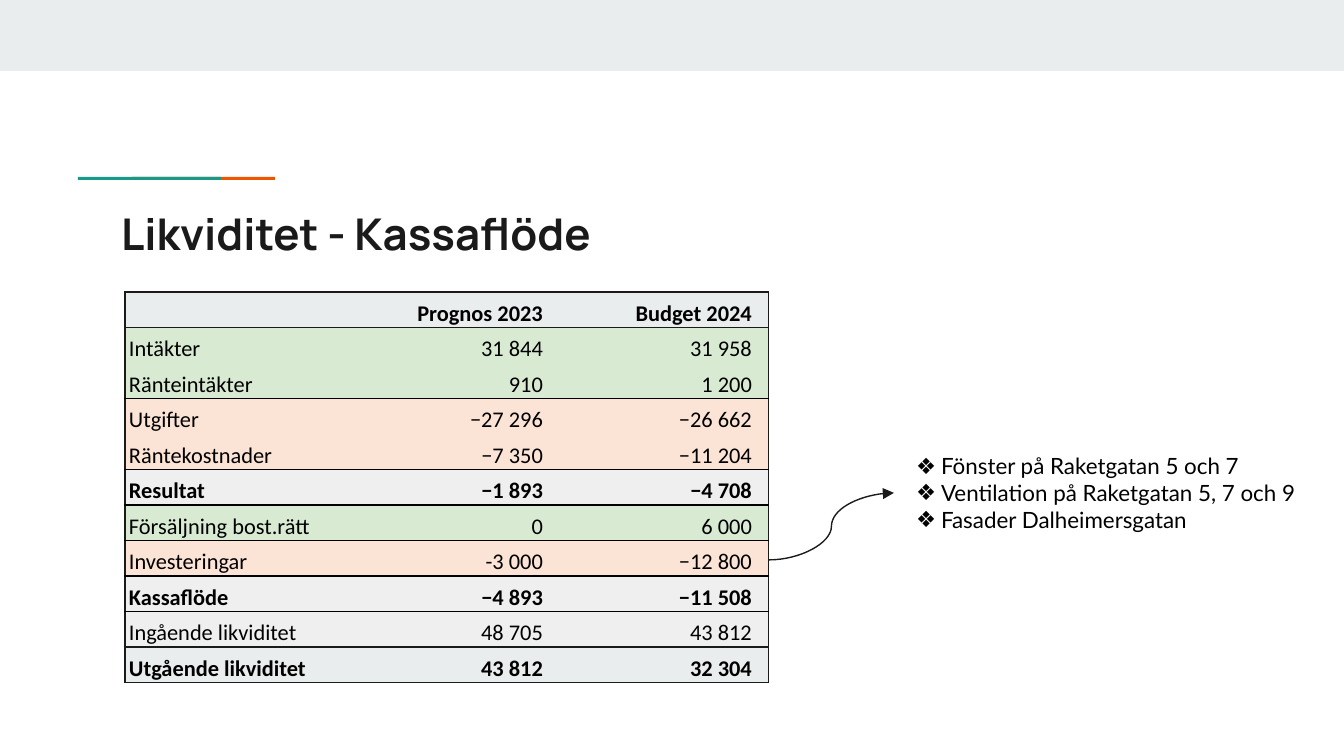
from lxml import etree
from pptx import Presentation
from pptx import util as u
from pptx.dml import color
from pptx.enum import shapes, text
from pptx.oxml import ns

EMU_PER_PX = 914400 / 134.4
INK, BLACK, WHITE = "1A1A1A", "000000", "FFFFFF"
MIST, GREEN, PEACH, GREY = "E9EDEE", "D9EAD3", "FBE4D5", "EFEFEF"
TEAL, ORANGE = "1A9988", "EB5600"

# label, forecast, budget, fill, bold, colour of the rule below
CASH_FLOW = [
    ("", "Prognos 2023", "Budget 2024", MIST, True, INK),
    ("Intäkter", "31 844", "31 958", GREEN, False, None),
    ("Ränteintäkter", "910", "1 200", GREEN, False, BLACK),
    ("Utgifter", "−27 296", "−26 662", PEACH, False, None),
    ("Räntekostnader", "−7 350", "−11 204", PEACH, False, BLACK),
    ("Resultat", "−1 893", "−4 708", GREY, True, BLACK),
    ("Försäljning bost.rätt", "0", "6 000", GREEN, False, BLACK),
    ("Investeringar", "-3 000", "−12 800", PEACH, False, BLACK),
    ("Kassaflöde", "−4 893", "−11 508", GREY, True, BLACK),
    ("Ingående likviditet", "48 705", "43 812", GREY, False, INK),
    ("Utgående likviditet", "43 812", "32 304", MIST, True, INK),
]
INVESTMENTS = [
    "Fönster på Raketgatan 5 och 7",
    "Ventilation på Raketgatan 5, 7 och 9",
    "Fasader Dalheimersgatan",
]


def px(length):
    return u.Emu(round(length * EMU_PER_PX))


def rgb(code):
    return color.RGBColor.from_string(code)


def add_run(paragraph, words, font, size, shade, bold=False):
    run = paragraph.add_run()
    run.text = words
    run.font.name, run.font.size, run.font.bold = font, u.Pt(size), bold
    run.font.color.rgb = rgb(shade)


def place(shape, box):
    shape.left, shape.top, shape.width, shape.height = map(px, box)


def set_margins(holder, left, top, right, bottom):
    holder.margin_left, holder.margin_top = px(left), px(top)
    holder.margin_right, holder.margin_bottom = px(right), px(bottom)


def add_bar(slide, box, shade):
    bar = slide.shapes.add_shape(shapes.MSO_SHAPE.RECTANGLE, *map(px, box))
    bar.shadow.inherit = False
    bar.fill.solid()
    bar.fill.fore_color.rgb = rgb(shade)
    bar.line.fill.background()


def add_accent(slide, box):
    """Two-tone rule: the teal bar overlaps the orange one."""
    left, top, width, height = box
    bar = 143
    add_bar(slide, (left + width - bar, top, bar, height), ORANGE)
    add_bar(slide, (left, top, bar, height), TEAL)


def fill_title(title, box):
    place(title, box)
    frame = title.text_frame
    frame.word_wrap = True
    frame.auto_size = text.MSO_AUTO_SIZE.NONE
    frame.vertical_anchor = text.MSO_ANCHOR.TOP
    set_margins(frame, 13, 13, 13, 13)
    heading = frame.paragraphs[0]
    heading.alignment = text.PP_ALIGN.LEFT
    add_run(heading, "Likviditet - Kassaflöde", "Manrope", 23.4, INK, True)


def set_borders(cell, **edges):
    properties = cell._tc.get_or_add_tcPr()
    for side in "LRTB":
        line = etree.SubElement(properties, ns.qn(f"a:ln{side}"), w=str(u.Pt(0.75)))
        if edges.get(side):
            paint = etree.SubElement(line, ns.qn("a:solidFill"))
            etree.SubElement(paint, ns.qn("a:srgbClr"), val=edges[side])
        else:
            etree.SubElement(line, ns.qn("a:noFill"))


def fill_cell(cell, words, column, bold):
    set_margins(cell, 4, 0, 17 if column == 2 else 4, 0)
    cell.vertical_anchor = text.MSO_ANCHOR.BOTTOM
    entry = cell.text_frame.paragraphs[0]
    entry.line_spacing = 1.15
    entry.alignment = text.PP_ALIGN.RIGHT if column else text.PP_ALIGN.LEFT
    if words:
        add_run(entry, words, "Calibri", 12, BLACK, bold)
    else:  # keeps the empty header cell from stretching its row
        etree.SubElement(entry._p, ns.qn("a:endParaRPr"), sz="1200")


def add_cash_flow(slide, box):
    frame = slide.shapes.add_table(len(CASH_FLOW), 3, *map(px, box))
    table = frame.table
    table.first_row = table.horz_banding = False
    for column, width in zip(table.columns, (222, 200, 222)):
        column.width = px(width)
    rule_above = INK
    for row, (*entries, fill, bold, rule_below) in enumerate(CASH_FLOW):
        table.rows[row].height = px(box[3] / len(CASH_FLOW))
        for column, words in enumerate(entries):
            cell = table.cell(row, column)
            fill_cell(cell, words, column, bold)
            set_borders(cell, L=INK if column == 0 else None,
                        R=INK if column == 2 else None,
                        T=rule_above, B=rule_below)
            cell.fill.solid()
            cell.fill.fore_color.rgb = rgb(fill)
        rule_above = rule_below


def fill_investments(body, box):
    place(body, box)
    frame = body.text_frame
    frame.word_wrap = True
    frame.auto_size = text.MSO_AUTO_SIZE.NONE
    frame.vertical_anchor = text.MSO_ANCHOR.TOP
    set_margins(frame, 13, 13, 13, 13)
    for index, investment in enumerate(INVESTMENTS):
        item = frame.add_paragraph() if index else frame.paragraphs[0]
        properties = item._p.get_or_add_pPr()
        properties.set("marL", str(px(34)))
        properties.set("indent", str(px(-25)))
        shade = etree.SubElement(properties, ns.qn("a:buClr"))
        etree.SubElement(shade, ns.qn("a:srgbClr"), val=BLACK)
        etree.SubElement(properties, ns.qn("a:buFont"), typeface="Lato")
        etree.SubElement(properties, ns.qn("a:buChar"), char="❖")
        item.space_before = u.Pt(0)
        item.alignment = text.PP_ALIGN.LEFT
        add_run(item, investment, "Lato", 12, BLACK)


def add_arrow(slide, box):
    """Curve rising from the lower left to the upper right of the box."""
    left, top, width, height = box
    arrow = slide.shapes.add_connector(
        shapes.MSO_CONNECTOR.CURVE,
        px(left), px(top + height), px(left + width), px(top))
    arrow.line.color.rgb = rgb(INK)
    arrow.line.width = u.Pt(0.75)
    etree.SubElement(arrow.line._get_or_add_ln(), ns.qn("a:tailEnd"), type="triangle")
    etree.SubElement(arrow._element.spPr, ns.qn("a:effectLst"))


def build_slide(deck):
    slide = deck.slides.add_slide(deck.slide_layouts[1])
    slide.background.fill.solid()
    slide.background.fill.fore_color.rgb = rgb(WHITE)
    add_bar(slide, (0, 0, 1344, 71), MIST)
    add_accent(slide, (78, 177, 197, 3))
    fill_title(slide.shapes.title, (108, 194, 1130, 79))
    add_cash_flow(slide, (125, 292, 644, 391))
    fill_investments(slide.placeholders[1], (894, 439, 418, 108))
    add_arrow(slide, (769, 493, 125, 67))


def main():
    deck = Presentation()
    deck.slide_width, deck.slide_height = px(1344), px(756)
    build_slide(deck)
    deck.save("out.pptx")


if __name__ == "__main__":
    main()
